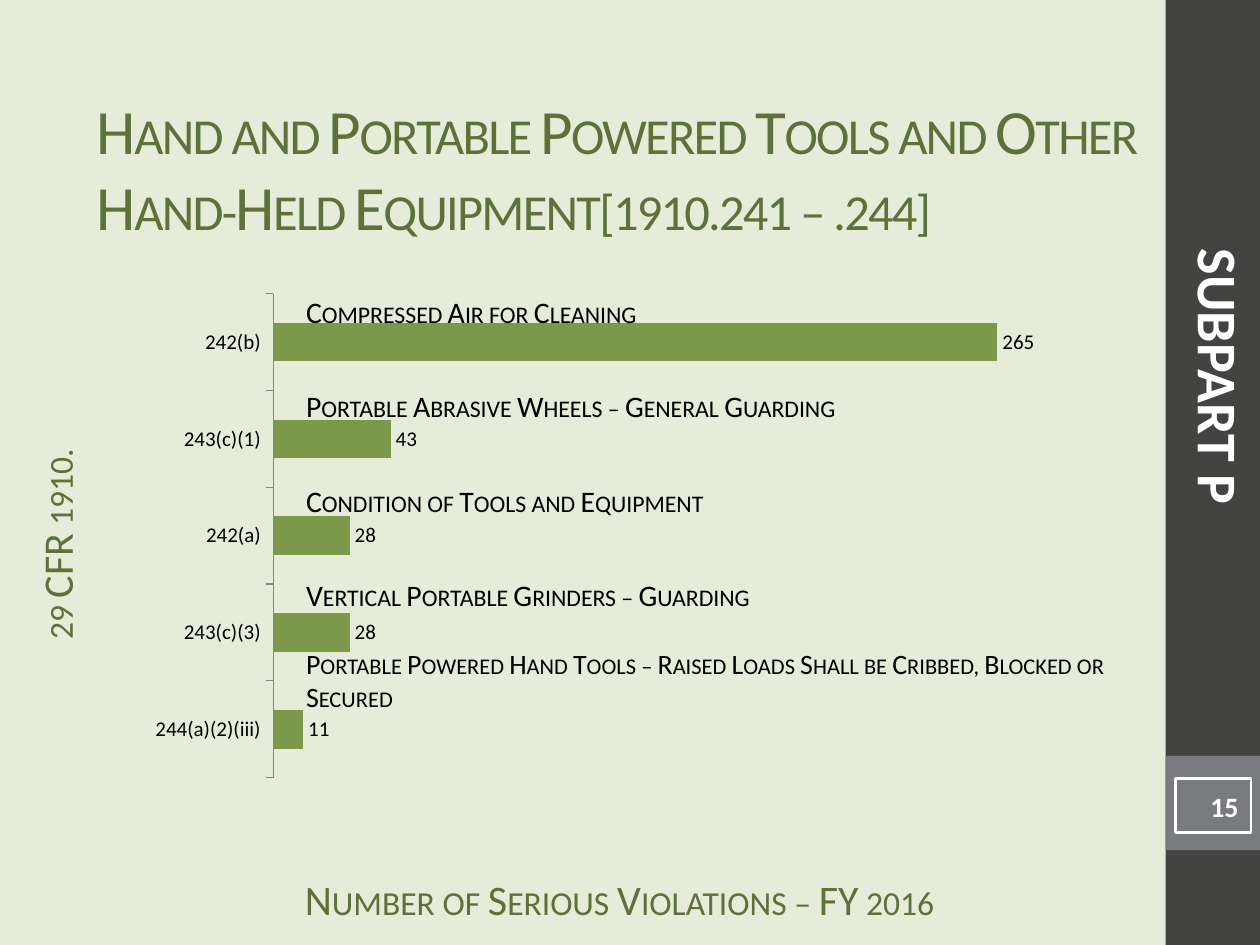
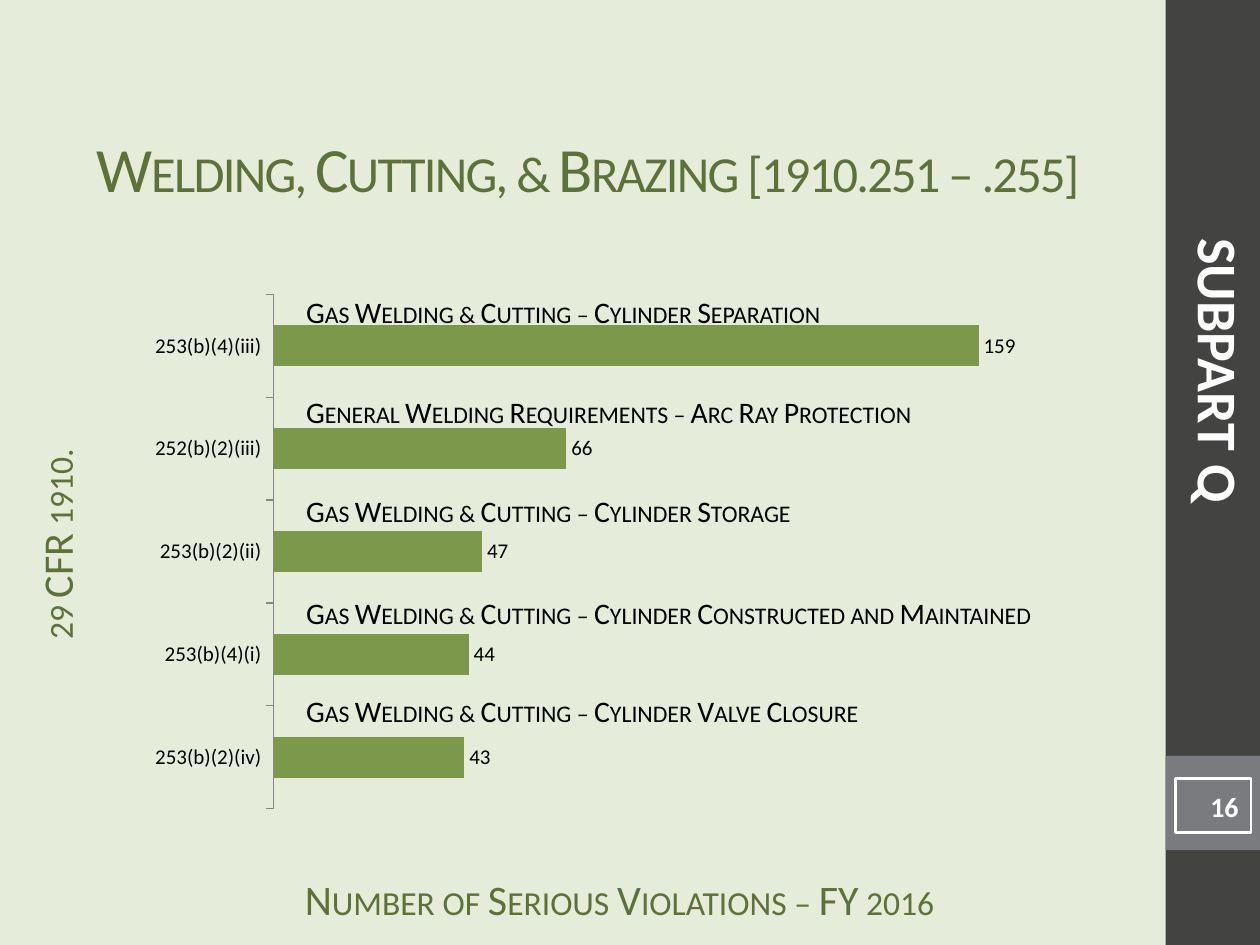
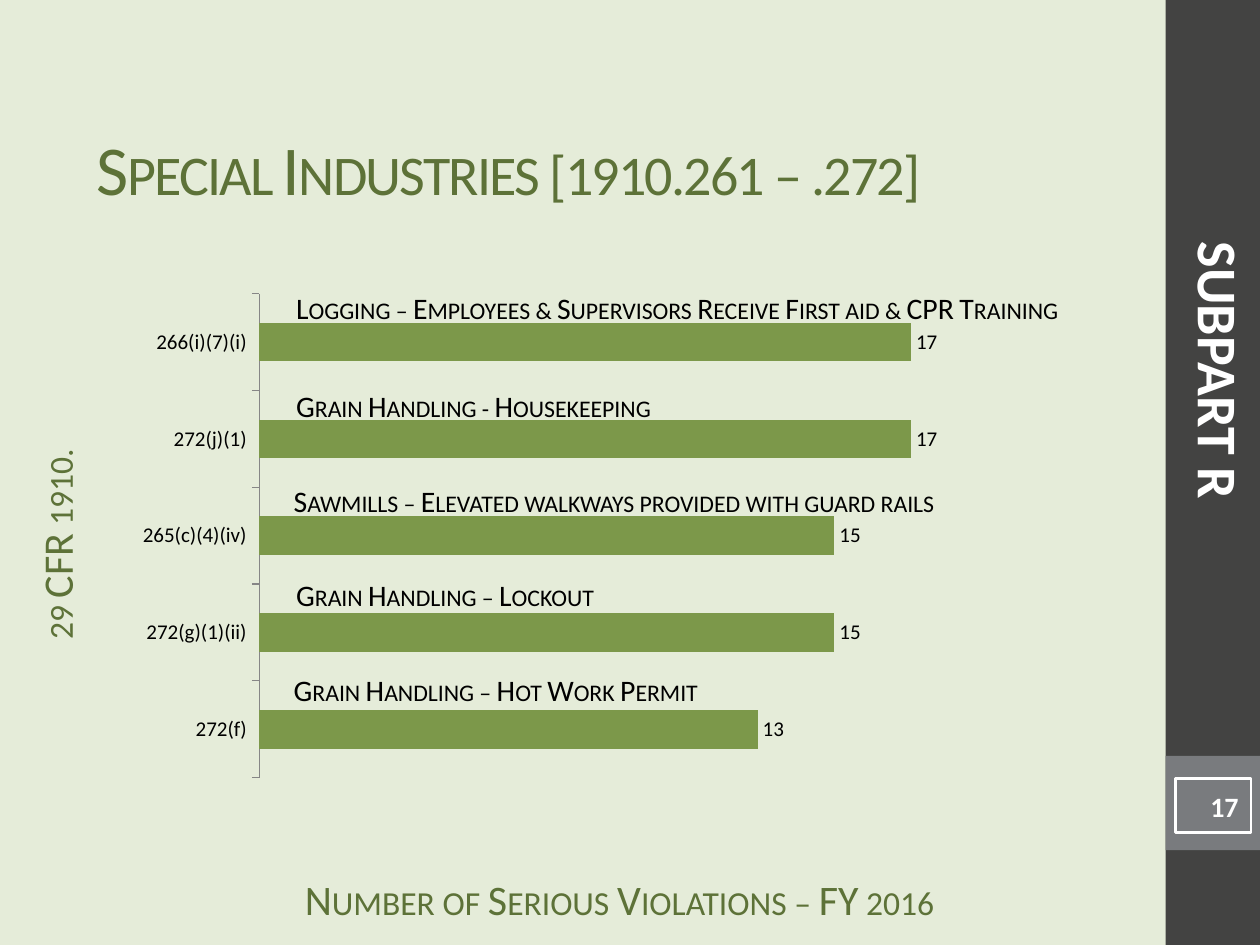
"""Build three slides of serious violation counts by subpart, FY 2016."""
from dataclasses import dataclass

from pptx import Presentation
from pptx.chart.data import CategoryChartData
from pptx.dml.color import RGBColor
from pptx.enum.chart import XL_CHART_TYPE as CT, XL_LABEL_POSITION as LP, XL_TICK_MARK as TM
from pptx.enum.shapes import MSO_SHAPE as SHP
from pptx.enum.text import MSO_ANCHOR as ANC, MSO_AUTO_SIZE as AUTO, PP_ALIGN as AL
from pptx.util import Cm, Pt


class Theme:
    font = "Calibri"
    page, rail, tab = "E5ECD9", "434342", "797B7E"
    green, bar, axis = "5D7238", "7C984A", "868686"
    black, white = "000000", "FFFFFF"
    caption, subpart, number = 24, 32, 16
    label, chart, ticks = 17, 10, 12


@dataclass
class Bar:
    code: str
    value: int
    label: str
    top: float
    width: float
    left: float = 5.92
    height: float = 0.99
    size: int = Theme.label
    wrap: bool = False
    flush: bool = False


SLIDES = [
    dict(
        title="Hand and Portable Powered Tools and Other Hand-Held Equipment[1910.241 – .244]",
        size=36, subpart="SUBPART P", number="15", chart=(2.74, 5.72, 19.69, 10.16),
        bars=[
            Bar("242(b)", 265, "Compressed Air for Cleaning", 5.79, 7.49),
            Bar("243(c)(1)", 43, "Portable Abrasive Wheels – General Guarding", 7.7, 11.68),
            Bar("242(a)", 28, "Condition of Tools and Equipment", 9.6, 11.68, wrap=True),
            Bar("243(c)(3)", 28, "Vertical Portable Grinders – Guarding", 11.51, 10.57, wrap=True),
            Bar("244(a)(2)(iii)", 11,
                "Portable Powered Hand Tools – Raised Loads Shall be Cribbed, Blocked or Secured",
                12.9, 16.94, height=1.63, size=16, wrap=True),
        ]),
    dict(
        title="Welding, Cutting, & Brazing [1910.251 – .255]",
        size=36, subpart="SUBPART Q ", number="16", chart=(2.74, 5.72, 19.25, 10.8),
        bars=[
            Bar("253(b)(4)(iii)", 159, "Gas Welding & Cutting – Cylinder Separation", 5.79, 11.43),
            Bar("252(b)(2)(iii)", 66, "General Welding Requirements – Arc Ray Protection", 7.82, 13.44),
            Bar("253(b)(2)(ii)", 47, "Gas Welding & Cutting – Cylinder Storage", 9.8, 10.64),
            Bar("253(b)(4)(i)", 44, "Gas Welding & Cutting – Cylinder Constructed and Maintained",
                11.86, 15.75),
            Bar("253(b)(2)(iv)", 43, "Gas Welding & Cutting – Cylinder Valve Closure", 13.84, 12.12),
        ]),
    dict(
        title="Special Industries [1910.261 – .272]",
        size=40, subpart="SUBPART R ", number="17", chart=(2.54, 5.72, 16.94, 10.16),
        bars=[
            Bar("266(i)(7)(i)", 17, "Logging – Employees & Supervisors Receive First aid & CPR Training",
                5.72, 16.56, left=5.72),
            Bar("272(j)(1)", 17, "Grain Handling - Housekeeping", 7.7, 7.87, left=5.72),
            Bar("265(c)(4)(iv)", 15, "Sawmills – Elevated walkways provided with guard rails",
                9.73, 14.17, height=1.07, wrap=True, flush=True),
            Bar("272(g)(1)(ii)", 15, "Grain Handling – Lockout", 11.51, 6.73, left=5.72),
            Bar("272(f)", 13, "Grain Handling – Hot Work Permit",
                13.54, 16.28, height=1.07, wrap=True, flush=True),
        ]),
]

RAIL = (23.5, 0, 1.9, 19.05)
TAB = (23.5, 15.24, 1.9, 1.9)
TITLE = (1.7, 1.47, 21.74, 3.81)
NUMBER = (23.7, 15.7, 1.52, 1.09)
SUBPART = (16.99, 6.78, 15.19, 1.63)
CAPTIONS = [
    ("Number of Serious Violations – FY 2016", (5.29, 17.6, 14.4, 0.84), 0),
    ("29 CFR 1910.", (-3.96, 10.24, 10.64, 1.47), 270),
]


def rgb(color):
    return RGBColor.from_string(color)


def cm(box):
    return [Cm(v) for v in box]


def set_font(font, size, color=Theme.black):
    font.name, font.size = Theme.font, Pt(size)
    font.color.rgb = rgb(color)


def write(tf, text, size, color, align=AL.LEFT, bold=False, small=False):
    p = tf.paragraphs[0]
    p.alignment = align
    r = p.add_run()
    r.text = text
    set_font(r.font, size, color)
    r.font.bold = bold
    if small:
        r.font._element.set("cap", "small")
    return r


def add_rect(slide, box, fill=None, line=None):
    sp = slide.shapes.add_shape(SHP.RECTANGLE, *cm(box))
    sp.shadow.inherit = False
    if fill:
        sp.fill.solid()
        sp.fill.fore_color.rgb = rgb(fill)
    else:
        sp.fill.background()
    if line:
        sp.line.color.rgb = rgb(line)
        sp.line.width = Pt(1.5)
    else:
        sp.line.fill.background()
    return sp


def add_text(slide, box, text, size, color, rotation=0, wrap=True, **style):
    sp = slide.shapes.add_textbox(*cm(box))
    sp.rotation = rotation
    sp.text_frame.word_wrap = wrap
    write(sp.text_frame, text, size, color, **style)
    return sp


def dress_layout(layout, slide):
    """Give the layout its background, title place, rail and captions."""
    layout.background.fill.solid()
    layout.background.fill.fore_color.rgb = rgb(Theme.page)
    title = layout.placeholders[0]
    title.left, title.top, title.width, title.height = cm(TITLE)
    parts = [add_rect(slide, RAIL, Theme.rail), add_rect(slide, TAB, Theme.tab)]
    for text, box, rotation in CAPTIONS:
        sp = add_text(slide, box, text, Theme.caption, Theme.green, rotation,
                      align=AL.CENTER, small=True)
        sp.text_frame.margin_top = 0
        parts.append(sp)
    for i, sp in enumerate(parts, 100):
        sp.element.xpath(".//p:cNvPr")[0].set("id", str(i))
        layout.shapes.element.append(sp.element)


def add_bars(slide, box, bars):
    data = CategoryChartData()
    data.categories = [b.code for b in reversed(bars)]
    data.add_series("Series 1", [b.value for b in reversed(bars)])
    chart = slide.shapes.add_chart(CT.BAR_CLUSTERED, *cm(box), data).chart
    set_font(chart.font, Theme.chart)
    chart.has_legend = chart.has_title = False
    val, cat = chart.value_axis, chart.category_axis
    val.visible = val.has_major_gridlines = False
    val.minimum_scale = 0
    cat.major_tick_mark = TM.OUTSIDE
    cat.format.line.color.rgb = rgb(Theme.axis)
    set_font(cat.tick_labels.font, Theme.ticks)
    plot = chart.plots[0]
    plot.gap_width = 150
    plot.vary_by_categories = False
    fill = plot.series[0].format.fill
    fill.solid()
    fill.fore_color.rgb = rgb(Theme.bar)
    plot.has_data_labels = True
    labels = plot.data_labels
    labels.show_value, labels.position = True, LP.OUTSIDE_END
    set_font(labels.font, Theme.ticks)


def add_bar_label(slide, b):
    sp = add_text(slide, (b.left, b.top, b.width, b.height), b.label, b.size,
                  Theme.black, wrap=b.wrap, small=True)
    tf = sp.text_frame
    if b.flush:
        tf.margin_left = tf.margin_top = tf.margin_right = tf.margin_bottom = 0
    else:
        tf.auto_size = AUTO.SHAPE_TO_FIT_TEXT


def fill_slide(slide, item):
    add_bars(slide, item["chart"], item["bars"])
    tf = slide.shapes.title.text_frame
    tf.auto_size, tf.vertical_anchor = AUTO.NONE, ANC.MIDDLE
    r = write(tf, item["title"], item["size"], Theme.green, small=True)
    r.font._element.set("spc", "-100")
    number = add_rect(slide, NUMBER, line=Theme.white).text_frame
    number.vertical_anchor = ANC.MIDDLE
    write(number, item["number"], Theme.number, Theme.white, AL.RIGHT, bold=True)
    for b in item["bars"]:
        add_bar_label(slide, b)
    sp = add_text(slide, SUBPART, item["subpart"], Theme.subpart, Theme.white, 90,
                  align=AL.CENTER, bold=True)
    sp.text_frame.auto_size = AUTO.SHAPE_TO_FIT_TEXT


def main():
    prs = Presentation()
    prs.slide_width, prs.slide_height = Cm(25.4), Cm(19.05)
    layout = prs.slide_layouts[5]
    slides = [prs.slides.add_slide(layout) for _ in SLIDES]
    dress_layout(layout, slides[0])
    for slide, item in zip(slides, SLIDES):
        fill_slide(slide, item)
    prs.save("out.pptx")


if __name__ == "__main__":
    main()
